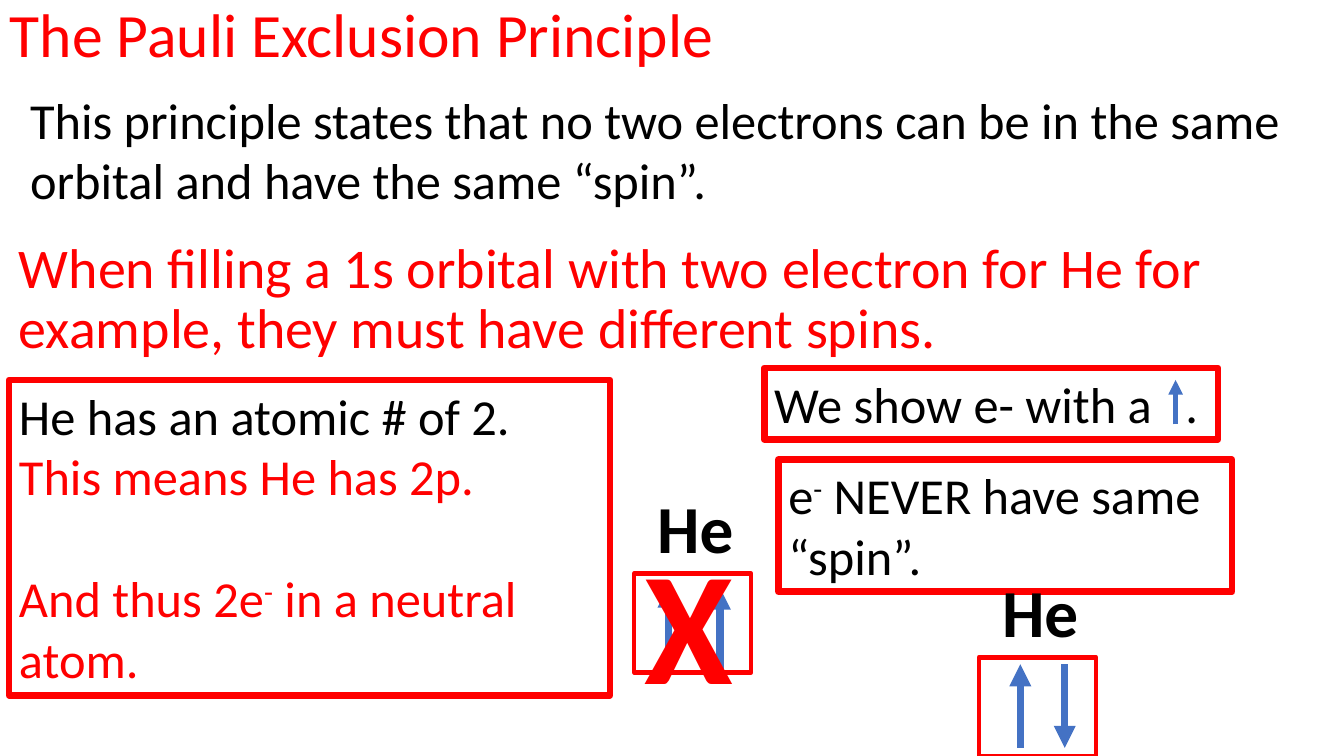
from lxml import etree
from pptx import Presentation
from pptx.dml.color import RGBColor
from pptx.enum.shapes import MSO_CONNECTOR, MSO_SHAPE
from pptx.enum.text import MSO_ANCHOR, PP_ALIGN
from pptx.oxml.ns import qn
from pptx.util import Inches, Pt

RED = RGBColor(0xFF, 0x00, 0x00)
BLACK = RGBColor(0x00, 0x00, 0x00)
BLUE = RGBColor(0x44, 0x72, 0xC4)
FONT = "Calibri"


def add_span(para, text, size, color, bold=False, raised=False):
    span = para.add_run()
    span.text = text
    span.font.name = FONT
    span.font.size = Pt(size)
    span.font.color.rgb = color
    span.font.bold = bold
    if raised:
        span.font._element.set("baseline", "30000")


def add_para(frame, pieces, size, color, bold=False, spacing=1.0, before=0):
    first = frame.paragraphs[0]
    para = frame.add_paragraph() if first.runs else first
    para.alignment = PP_ALIGN.LEFT
    para.line_spacing = spacing
    para.space_before = Pt(before)
    for index, piece in enumerate(pieces):
        add_span(para, piece, size, color, bold, raised=index == 1)
    return para


def add_text(page, place, text, size, color, bold=False, spacing=1.0,
             anchor=MSO_ANCHOR.TOP):
    box = page.shapes.add_textbox(*map(Inches, place))
    frame = box.text_frame
    frame.word_wrap = True
    frame.vertical_anchor = anchor
    add_para(frame, [text], size, color, bold, spacing)


def add_frame(page, place, width):
    box = page.shapes.add_shape(MSO_SHAPE.RECTANGLE, *map(Inches, place))
    box.shadow.inherit = False
    box.fill.background()
    box.line.color.rgb = RED
    box.line.width = Pt(width)
    frame = box.text_frame
    frame.word_wrap = True
    frame.vertical_anchor = MSO_ANCHOR.TOP
    return frame


def add_tab_stop(para, position):
    stops = etree.SubElement(para._p.get_or_add_pPr(), qn("a:tabLst"))
    etree.SubElement(stops, qn("a:tab"), pos=str(Inches(position)), algn="l")


def add_arrow(page, x, start, end, width=5.25):
    arrow = page.shapes.add_connector(
        MSO_CONNECTOR.STRAIGHT, Inches(x), Inches(start), Inches(x), Inches(end))
    arrow.line.color.rgb = BLUE
    arrow.line.width = Pt(width)
    etree.SubElement(arrow.line._get_or_add_ln(), qn("a:tailEnd"), type="triangle")
    etree.SubElement(arrow._element.spPr, qn("a:effectLst"))


def add_orbital(page, left, top, arrows):
    add_frame(page, (left, top, 1.16, 0.98), 3.25)
    add_text(page, (left + 0.13, top - 0.91, 1.16, 0.91), "He", 48, BLACK, bold=True)
    for x, start, end in arrows:
        add_arrow(page, x, start, end)


def main():
    deck = Presentation()
    deck.slide_width = Inches(13.33)
    deck.slide_height = Inches(7.5)
    page = deck.slides.add_slide(deck.slide_layouts[6])

    add_text(page, (0, -0.1, 11.5, 0.94), "The Pauli Exclusion Principle",
             44, RED, spacing=0.9, anchor=MSO_ANCHOR.MIDDLE)
    add_text(page, (0.2, 0.83, 12.87, 1.31),
             "This principle states that no two electrons can be in the same "
             "orbital and have the same “spin”.", 36, BLACK)
    add_text(page, (0.09, 2.33, 12.66, 0.84),
             "When filling a 1s orbital with two electron for He for example, "
             "they must have different spins.", 40, RED, spacing=0.9)

    helium = add_frame(page, (0.09, 3.77, 5.96, 3.13), 4.75)
    add_para(helium, ["He has an atomic # of 2."], 36, BLACK)
    add_para(helium, ["This means He has 2p."], 36, RED)
    add_para(helium, ["And thus 2e", "-", " in a neutral atom."], 36, RED, before=44)

    symbol = add_frame(page, (7.58, 3.65, 4.5, 0.71), 4.75)
    sentence = add_para(symbol, ["We show e- with a\t."], 36, BLACK)
    add_tab_stop(sentence, 4.08)
    add_arrow(page, 11.66, 4.21, 3.77, width=3.5)

    add_orbital(page, 6.29, 5.69, [(6.63, 6.64, 5.81), (7.14, 6.67, 5.83)])
    add_text(page, (6.29, 5.36, 2.12, 0.84), "X", 115, RED, bold=True, spacing=0.9)

    rule = add_frame(page, (7.72, 4.56, 4.5, 1.31), 4.75)
    add_para(rule, ["e", "-", " NEVER have same “spin”."], 36, BLACK)

    add_orbital(page, 9.71, 6.52, [(10.12, 7.42, 6.59), (10.56, 6.59, 7.42)])

    deck.save("out.pptx")


if __name__ == "__main__":
    main()
